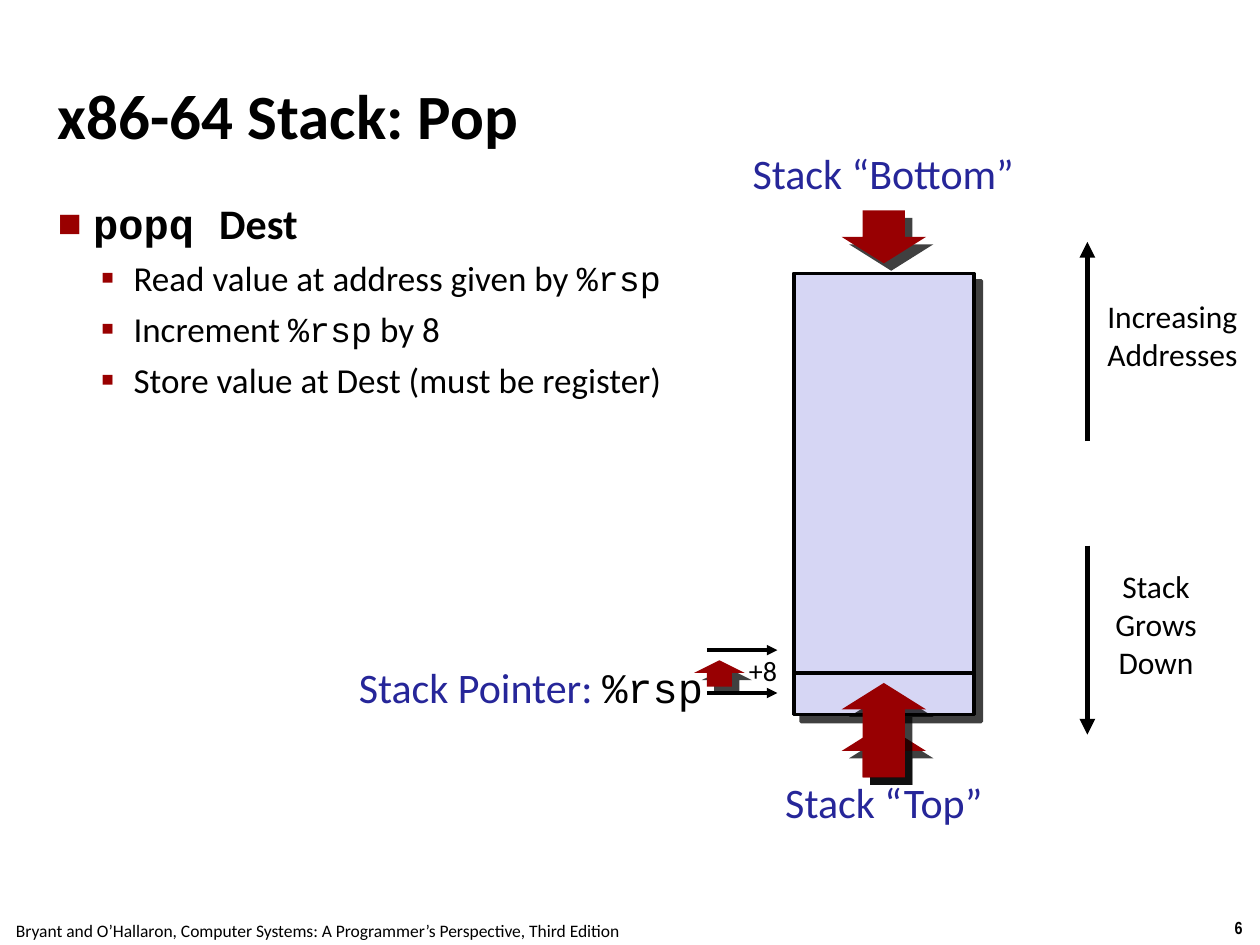
from lxml.etree import SubElement as Sub
from pptx import Presentation
from pptx.dml.color import RGBColor as Rgb
from pptx.enum.shapes import MSO_CONNECTOR as Con, MSO_SHAPE as Geo
from pptx.enum.text import MSO_ANCHOR as Anchor, PP_ALIGN as Align
from pptx.oxml.ns import qn
from pptx.util import Inches, Pt

BLACK = Rgb(0, 0, 0)
WHITE = Rgb(255, 255, 255)
RED = Rgb(0x98, 0x00, 0x02)
BLUE = Rgb(0x26, 0x26, 0x99)
LILAC = Rgb(0xD6, 0xD6, 0xF4)
SANS, MONO, SLIM = "Calibri", "Courier New", "Arial Narrow"


def add_run(para, text, size, font=SANS, color=BLACK, bold=False):
    run = para.add_run()
    run.text = text
    run.font.name = font
    run.font.size = Pt(size)
    run.font.bold = bold
    run.font.color.rgb = color


def set_frame(shape, pad=(0, 0), wrap=False, anchor=Anchor.TOP):
    frame = shape.text_frame
    frame.word_wrap = wrap
    frame.vertical_anchor = anchor
    frame.margin_left = frame.margin_right = Inches(pad[0])
    frame.margin_top = frame.margin_bottom = Inches(pad[1])
    return frame


def add_text(shapes, box, runs, align=Align.CENTER, **opts):
    text = shapes.add_textbox(*map(Inches, box))
    para = set_frame(text, **opts).paragraphs[0]
    para.alignment = align
    for run in runs:
        add_run(para, *run)
    return para


def set_hang(para, left, hang):
    props = para._p.get_or_add_pPr()
    props.set("marL", str(Inches(left)))
    props.set("indent", str(-Inches(hang)))
    return props


def drop_shadow(shape):
    shape.shadow.inherit = False
    effects = shape._element.spPr.find(qn("a:effectLst"))
    shadow = Sub(effects, qn("a:outerShdw"), dist=str(Pt(6)), dir="2700000",
                 algn="ctr", rotWithShape="0")
    color = Sub(shadow, qn("a:srgbClr"), val=str(BLACK))
    Sub(color, qn("a:alpha"), val="75000")


def add_rect(shapes, box, fill, width=0):
    rect = shapes.add_shape(Geo.RECTANGLE, *map(Inches, box))
    rect.shadow.inherit = False
    rect.fill.solid()
    rect.fill.fore_color.rgb = fill
    if width:
        rect.line.color.rgb = BLACK
        rect.line.width = Pt(width)
    else:
        rect.line.fill.background()
    return rect


def add_line(shapes, start, end, width, arrow=True):
    line = shapes.add_connector(Con.STRAIGHT, *map(Inches, start + end))
    line.line.color.rgb = BLACK
    line.line.width = Pt(width)
    props = line._element.spPr
    if arrow:
        Sub(props.find(qn("a:ln")), qn("a:tailEnd"), type="triangle")
    Sub(props, qn("a:effectLst"))


def add_arrow(shapes, box, head, up=True):
    left, top, width, height = box
    tip, tail = (top, top + height) if up else (top + height, top)
    neck = tip + head if up else tip - head
    outline = [(0, neck), (0.25, neck), (0.25, tail), (0.75, tail),
               (0.75, neck), (1, neck), (0.5, tip)]
    points = [(Inches(left + part * width), Inches(y)) for part, y in outline]
    pen = shapes.build_freeform(*points[0], scale=1.0)
    pen.add_line_segments(points[1:], close=True)
    arrow = pen.convert_to_shape()
    arrow.fill.solid()
    arrow.fill.fore_color.rgb = RED
    arrow.line.fill.background()
    drop_shadow(arrow)


def add_footer(shapes):
    pad = (0.1, 0.05)
    add_text(shapes, (9.66, 7.23, 0.34, 0.27),
             [("6", 10, SLIM, BLACK, True)], pad=pad)
    add_text(shapes, (-0.02, 7.25, 5.08, 0.27),
             [("Bryant and O’Hallaron, Computer Systems: "
               "A Programmer’s Perspective, Third Edition", 10)], pad=pad)


def add_title(shapes, box):
    para = add_text(shapes, box, [("x86-64 Stack: Pop", 36, SANS, BLACK, True)],
                    Align.LEFT, pad=(0.04, 0.04), wrap=True, anchor=Anchor.MIDDLE)
    set_hang(para, 0.13, 0.13)


def add_stack(shapes, box):
    left, top, width, height = box
    bottom, cell = top + height, 0.33
    middle = left + width / 2
    wide, tall, head = 0.67, 0.42, 0.21
    side = middle - wide / 2
    add_arrow(shapes, (side, bottom + 0.08, wide, tall), head)
    add_text(shapes, (middle - 0.85, bottom + 0.49, 1.7, 0.49),
             [("Stack “Top”", 24, SANS, BLUE)])
    add_text(shapes, (middle - 1.12, top - 1, 2.23, 0.49),
             [("Stack “Bottom”", 24, SANS, BLUE)])
    add_arrow(shapes, (side, top - 0.5, wide, tall), head, up=False)
    drop_shadow(add_rect(shapes, box, LILAC, 2))
    add_line(shapes, (left, bottom - cell), (left + width, bottom - cell), 2, False)
    add_rect(shapes, (left, bottom - cell, width, cell), LILAC, 2)
    add_arrow(shapes, (side, bottom - 0.25, wide, 0.75), head)


def add_pointer(shapes, box):
    left, top, width, height = box
    right, bottom = left + width, top + height
    add_line(shapes, (left, bottom), (right, bottom), 2)
    add_text(shapes, (left - 2.81, bottom - 0.25, 2.78, 0.4),
             [("Stack Pointer: ", 24, SANS, BLUE), ("%rsp", 24, MONO)], Align.RIGHT)
    step = shapes.add_group_shape().shapes
    add_line(step, (left, top), (right, top), 2)
    add_text(step, (right - 0.27, top - 0.01, 0.31, 0.35),
             [("+8", 16)], pad=(0.04, 0.04))
    add_arrow(step, (left - 0.1, top + 0.08, 0.4, 0.21), 0.1)


def add_note(shapes, box, lines, start, end, wrap):
    add_line(shapes, start, end, 3)
    frame = set_frame(add_rect(shapes, box, WHITE), wrap=wrap)
    for index, line in enumerate(lines):
        para = frame.add_paragraph() if index else frame.paragraphs[0]
        para.alignment = Align.CENTER
        add_run(para, line, 18)


def add_body(shapes, box):
    frame = set_frame(shapes.add_textbox(*map(Inches, box)), (0.04, 0.04), True)
    items = [
        (0, [("popq ", 24, MONO, BLACK, True), ("Dest", 24, SANS, BLACK, True)]),
        (1, [("Read value at address given by ", 20), ("%rsp", 20, MONO)]),
        (1, [("Increment ", 20), ("%rsp", 20, MONO), (" by 8", 20)]),
        (1, [("Store value at Dest (must be register)", 20)]),
    ]
    styles = [(0.28, 0.28, 6, "■", 60), (0.6, 0.26, 5, "▪", 110)]
    for index, (level, runs) in enumerate(items):
        left, hang, space, mark, size = styles[level]
        para = frame.add_paragraph() if index else frame.paragraphs[0]
        para.level = level
        para.space_before = Pt(space)
        props = set_hang(para, left, hang)
        Sub(Sub(props, qn("a:buClr")), qn("a:srgbClr"), val="990000")
        Sub(props, qn("a:buSzPct"), val=str(size * 1000))
        Sub(props, qn("a:buFont"), typeface=SANS)
        Sub(props, qn("a:buChar"), char=mark)
        for run in runs:
            add_run(para, *run)


def main():
    deck = Presentation()
    deck.slide_width, deck.slide_height = Inches(10), Inches(7.5)
    shapes = deck.slides.add_slide(deck.slide_layouts[6]).shapes
    add_footer(shapes)
    add_note(shapes, (8.73, 4.5, 0.89, 1), ["Stack Grows", "Down"],
             (8.63, 4.33), (8.63, 5.83), True)
    add_note(shapes, (8.74, 2.36, 1.13, 0.69), ["Increasing", "Addresses"],
             (8.63, 3.5), (8.63, 1.92), False)
    add_title(shapes, (0.42, 0.28, 9.17, 1.25))
    add_stack(shapes, (6.3, 2.17, 1.43, 3.5))
    add_pointer(shapes, (5.61, 5.16, 0.56, 0.34))
    add_body(shapes, (0.42, 1.53, 9.17, 5.94))
    deck.save("out.pptx")


if __name__ == "__main__":
    main()
